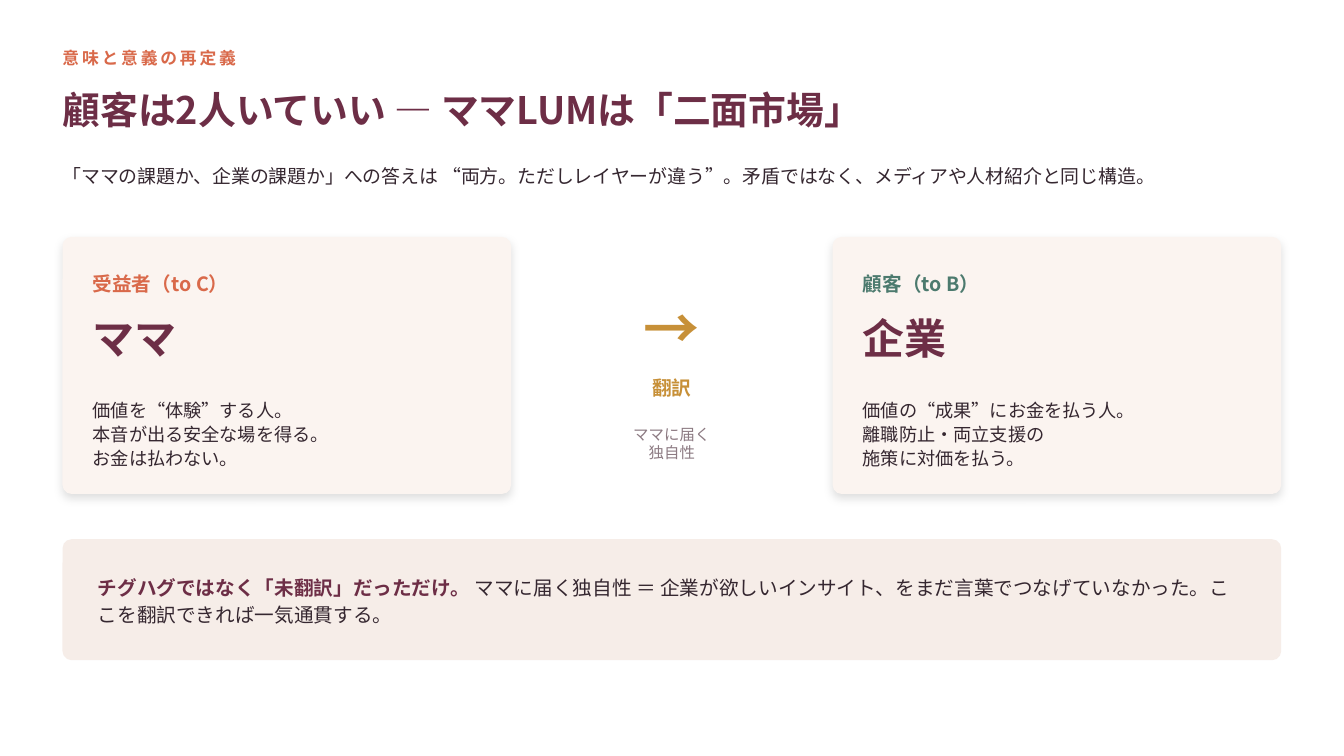
from dataclasses import dataclass

from lxml.etree import SubElement
from pptx import Presentation
from pptx.dml.color import RGBColor
from pptx.enum.shapes import MSO_SHAPE
from pptx.enum.text import MSO_ANCHOR, PP_ALIGN
from pptx.oxml.ns import qn
from pptx.shapes.autoshape import Shape
from pptx.slide import Slide
from pptx.util import Inches, Pt

FONT = "Noto Sans CJK JP"
CORAL = RGBColor(0xD9, 0x69, 0x4A)
PLUM = RGBColor(0x6D, 0x2E, 0x46)
INK = RGBColor(0x35, 0x27, 0x30)
GREEN = RGBColor(0x4C, 0x7A, 0x6E)
GOLD = RGBColor(0xC7, 0x90, 0x38)
MUTED = RGBColor(0x8C, 0x7A, 0x82)
CREAM = RGBColor(0xFB, 0xF4, 0xF0)
SAND = RGBColor(0xF6, 0xED, 0xE8)

# The grid has square cells; every length below counts columns or rows.
CELL = Inches(0.1)
SLIDE_COLS, SLIDE_ROWS = 133.33, 75
MARGIN = 6.2
CONTENT_COLS = 120.9
CARD_COLS, CARD_ROWS, CARD_TOP = 44.5, 25.5, 23.5
CARD_PAD = 3
BRIDGE_LEFT = MARGIN + CARD_COLS
BRIDGE_COLS = CONTENT_COLS - 2 * CARD_COLS
SUMMARY_PAD = 3.5


@dataclass(frozen=True)
class Area:
    col: float
    row: float
    cols: float
    rows: float

    def emu(self) -> list[int]:
        return [round(n * CELL) for n in (self.col, self.row, self.cols, self.rows)]


@dataclass(frozen=True)
class Party:
    col: float
    role: str
    role_color: RGBColor
    name: str
    description: str


PARTIES = (
    Party(MARGIN, "受益者（to C）", CORAL, "ママ",
          "価値を“体験”する人。\n本音が出る安全な場を得る。\nお金は払わない。"),
    Party(BRIDGE_LEFT + BRIDGE_COLS, "顧客（to B）", GREEN, "企業",
          "価値の“成果”にお金を払う人。\n離職防止・両立支援の\n施策に対価を払う。"),
)


def add_text(slide: Slide, area: Area, text: str, *, size: float, color: RGBColor,
             bold: bool = False, lead: str = "", lead_color: RGBColor = PLUM,
             align: PP_ALIGN = PP_ALIGN.LEFT, line_spacing: float = 1.0,
             tracking: float = 0) -> None:
    """Write one paragraph per line of text, the first opened by a bold lead."""
    frame = slide.shapes.add_textbox(*area.emu()).text_frame
    frame.word_wrap = True
    frame.vertical_anchor = MSO_ANCHOR.MIDDLE
    frame.margin_left = frame.margin_top = frame.margin_right = frame.margin_bottom = 0
    for index, line in enumerate(text.split("\n")):
        paragraph = frame.add_paragraph() if index else frame.paragraphs[0]
        paragraph.alignment = align
        paragraph.line_spacing = line_spacing
        pieces = [(line, color, bold)]
        if lead and index == 0:
            pieces.insert(0, (lead, lead_color, True))
        for words, run_color, run_bold in pieces:
            run = paragraph.add_run()
            run.text = words
            run.font.name = FONT
            run.font.size = Pt(size)
            run.font.bold = run_bold
            run.font.color.rgb = run_color
            properties = run.font._element
            SubElement(properties, qn("a:ea"), typeface=FONT)
            if tracking:
                properties.set("spc", str(round(tracking * 100)))


def add_panel(slide: Slide, area: Area, fill: RGBColor, corner: float) -> Shape:
    panel = slide.shapes.add_shape(MSO_SHAPE.ROUNDED_RECTANGLE, *area.emu())
    panel.adjustments[0] = corner
    panel.fill.solid()
    panel.fill.fore_color.rgb = fill
    panel.line.fill.background()
    panel.shadow.inherit = False
    return panel


def add_soft_shadow(panel: Shape) -> None:
    effects = panel._element.spPr.find(qn("a:effectLst"))
    shadow = SubElement(effects, qn("a:outerShdw"), blurRad=str(Pt(7)),
                        dist=str(Pt(3)), dir="5400000", rotWithShape="0")
    tint = SubElement(shadow, qn("a:srgbClr"), val="000000")
    SubElement(tint, qn("a:alpha"), val="12000")


def add_heading(slide: Slide) -> None:
    add_text(slide, Area(MARGIN, 4.2, 110, 3), "意味と意義の再定義",
             size=12, color=CORAL, bold=True, tracking=2)
    add_text(slide, Area(MARGIN, 7.2, CONTENT_COLS, 7.2),
             "顧客は2人いていい — ママLUMは「二面市場」", size=27, color=PLUM, bold=True)
    add_text(slide, Area(MARGIN, 15.5, CONTENT_COLS, 4),
             "「ママの課題か、企業の課題か」への答えは “両方。ただしレイヤーが違う”。"
             "矛盾ではなく、メディアや人材紹介と同じ構造。", size=13.5, color=INK)


def add_party_card(slide: Slide, party: Party) -> None:
    card = add_panel(slide, Area(party.col, CARD_TOP, CARD_COLS, CARD_ROWS), CREAM, 0.035)
    add_soft_shadow(card)
    left, width = party.col + CARD_PAD, CARD_COLS - 2 * CARD_PAD
    add_text(slide, Area(left, 26.1, width, 4), party.role,
             size=14, color=party.role_color, bold=True)
    add_text(slide, Area(left, 30.5, width, 6), party.name, size=30, color=PLUM, bold=True)
    add_text(slide, Area(left, 38, width, 10), party.description,
             size=13, color=INK, line_spacing=1.1)


def add_bridge(slide: Slide) -> None:
    """Show the translation step between the two cards."""
    add_text(slide, Area(BRIDGE_LEFT, 29, BRIDGE_COLS, 7), "→",
             size=40, color=GOLD, bold=True, align=PP_ALIGN.CENTER)
    add_text(slide, Area(BRIDGE_LEFT, 36.5, BRIDGE_COLS, 4), "翻訳",
             size=14, color=GOLD, bold=True, align=PP_ALIGN.CENTER)
    add_text(slide, Area(BRIDGE_LEFT, 40.5, BRIDGE_COLS, 7), "ママに届く\n独自性",
             size=11, color=MUTED, align=PP_ALIGN.CENTER)


def add_summary(slide: Slide) -> None:
    add_panel(slide, Area(MARGIN, 53.5, CONTENT_COLS, 12), SAND, 0.075)
    add_text(slide, Area(MARGIN + SUMMARY_PAD, 53.5, CONTENT_COLS - 2 * SUMMARY_PAD, 12),
             "ママに届く独自性 ＝ 企業が欲しいインサイト、をまだ言葉でつなげていなかった。"
             "ここを翻訳できれば一気通貫する。", size=14, color=INK,
             lead="チグハグではなく「未翻訳」だっただけ。 ", line_spacing=1.15)


def main() -> None:
    deck = Presentation()
    deck.slide_width = round(SLIDE_COLS * CELL)
    deck.slide_height = SLIDE_ROWS * CELL
    slide = deck.slides.add_slide(deck.slide_layouts[6])
    add_heading(slide)
    for party in PARTIES:
        add_party_card(slide, party)
    add_bridge(slide)
    add_summary(slide)
    deck.save("out.pptx")


if __name__ == "__main__":
    main()
